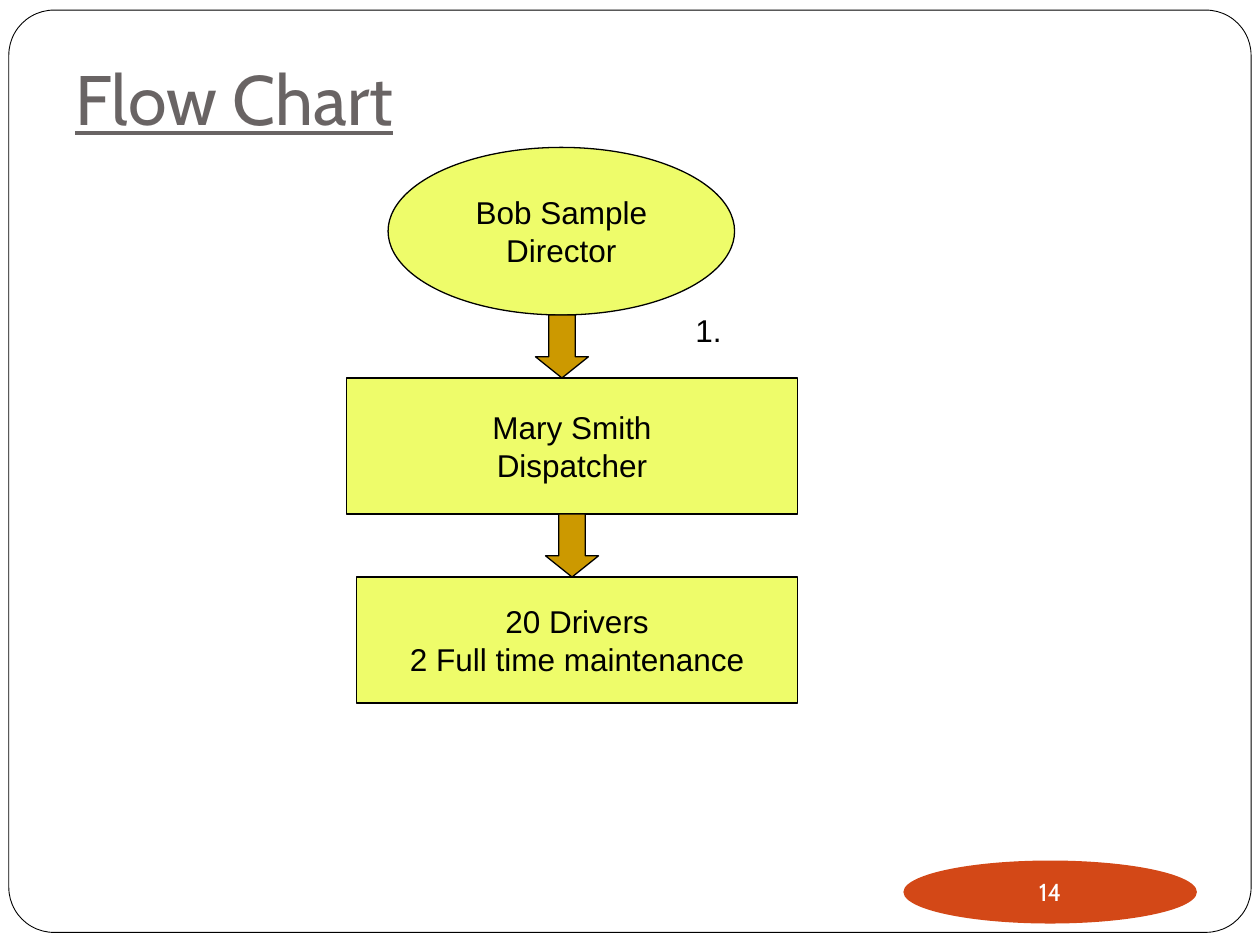
from pptx import Presentation
from pptx.dml.color import RGBColor
from pptx.enum.shapes import MSO_SHAPE as Shape
from pptx.enum.text import MSO_ANCHOR as Anchor, PP_ALIGN as Align
from pptx.util import Inches, Pt

COLORS = {
    "paper": "FFFFFF",
    "ink": "000000",
    "title": "696464",
    "badge": "D34817",
    "step": "EEFC6A",
    "arrow": "CC9900",
}


class FlowPage:
    def __init__(self, page):
        self.page = page

    def color(self, name):
        return RGBColor.from_string(COLORS[name])

    def set_lines(self, frame, lines, size=18, font="Arial", color="ink",
                  align=Align.LEFT, underline=None):
        frame.text = "\n".join(lines)
        for para in frame.paragraphs:
            para.alignment = align
            para.font.size = Pt(size)
            para.font.name = font
            para.font.color.rgb = self.color(color)
            para.font.underline = underline

    def shape(self, kind, place, fill, line=0.75, adjustments=()):
        box = self.page.shapes.add_shape(kind, *map(Inches, place))
        box.shadow.inherit = False
        box.fill.solid()
        box.fill.fore_color.rgb = self.color(fill)
        if line:
            box.line.color.rgb = self.color("ink")
            box.line.width = Pt(line)
        else:
            box.line.fill.background()
        for index, value in enumerate(adjustments):
            box.adjustments[index] = value
        return box

    def step(self, kind, place, lines):
        frame = self.shape(kind, place, "step").text_frame
        frame.word_wrap = False
        frame.vertical_anchor = Anchor.MIDDLE
        self.set_lines(frame, lines, align=Align.CENTER)

    def arrow(self, left, top):
        self.shape(Shape.DOWN_ARROW, (left, top, 0.42, 0.5), "arrow",
                   adjustments=(0.5, 0.4))

    def badge(self, place, number):
        frame = self.shape(Shape.OVAL, place, "badge", line=0).text_frame
        frame.margin_left = frame.margin_right = 0
        frame.margin_top = frame.margin_bottom = 0
        frame.word_wrap = False
        frame.vertical_anchor = Anchor.MIDDLE
        self.set_lines(frame, [number], 14, "Cabin", "paper", Align.CENTER)

    def text(self, place, words, anchor=Anchor.TOP, bottom=0.05, **style):
        frame = self.page.shapes.add_textbox(*map(Inches, place)).text_frame
        frame.word_wrap = True
        frame.vertical_anchor = anchor
        frame.margin_bottom = Inches(bottom)
        self.set_lines(frame, [words], **style)


def main():
    deck = Presentation()
    deck.slide_width, deck.slide_height = Inches(10), Inches(7.5)
    flow = FlowPage(deck.slides.add_slide(deck.slide_layouts[6]))

    flow.shape(Shape.ROUNDED_RECTANGLE, (0.07, 0.08, 9.86, 7.32), "paper",
               line=0.5, adjustments=(0.049,))
    flow.text((0.5, 0.33, 8.25, 0.88), "Flow Chart", Anchor.BOTTOM, 0.1,
              size=40, font="Cabin", color="title", underline=True)
    flow.badge((7.17, 6.83, 2.33, 0.5), "14")

    flow.step(Shape.OVAL, (3.08, 1.17, 2.75, 1.33), ["Bob Sample", "Director"])
    flow.step(Shape.RECTANGLE, (2.75, 3, 3.58, 1.08), ["Mary Smith", "Dispatcher"])
    flow.step(Shape.RECTANGLE, (2.83, 4.58, 3.5, 1),
              ["20 Drivers", "2 Full time maintenance"])
    flow.arrow(4.33, 4.08)
    flow.text((5.42, 2.42, 3.58, 0.4), "1.")
    flow.arrow(4.25, 2.5)

    deck.save("out.pptx")


if __name__ == "__main__":
    main()
